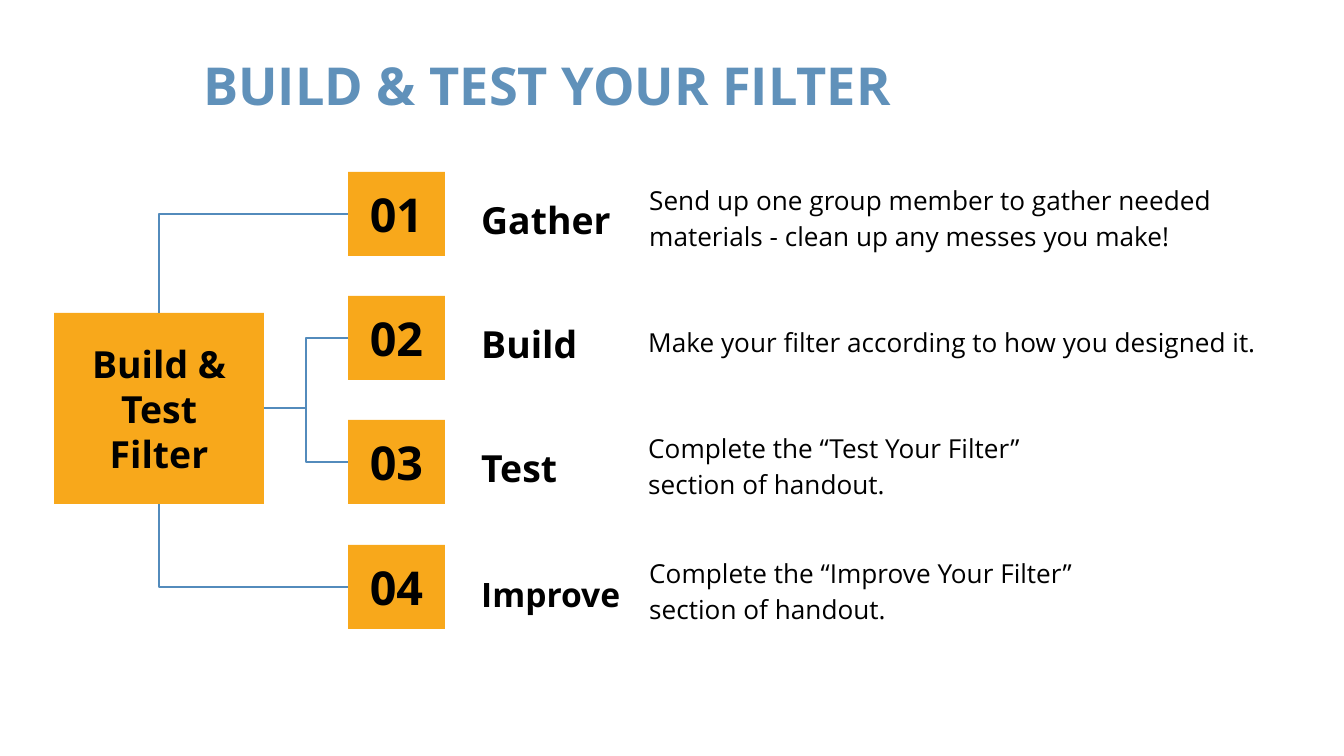
from pptx import Presentation, util as u
from pptx.dml.color import RGBColor
from pptx.enum import shapes, text
from pptx.oxml.ns import qn
from lxml import etree

PX = 914400 / 134.4  # EMU per px
ORANGE = RGBColor(0xF8, 0xA8, 0x1B)
TITLE_BLUE = RGBColor(0x60, 0x91, 0xBA)
LINE_BLUE = RGBColor(0x53, 0x8B, 0xBC)
BLACK = RGBColor(0, 0, 0)

TOP, MIDDLE, BOTTOM = (text.MSO_ANCHOR.TOP, text.MSO_ANCHOR.MIDDLE,
                       text.MSO_ANCHOR.BOTTOM)
LEFT, CENTER = text.PP_ALIGN.LEFT, text.PP_ALIGN.CENTER


def px(*values):
    return [u.Emu(round(v * PX)) for v in values]


def write(sp, content, size=14, color=BLACK, bold=False, align=LEFT,
          anchor=MIDDLE, spacing=None, font="Open Sans"):
    """Fill a shape with text, one paragraph per line."""
    tf = sp.text_frame
    tf.word_wrap = True
    tf.vertical_anchor = anchor
    tf.margin_left = tf.margin_right = u.Inches(0.1)
    tf.margin_top = tf.margin_bottom = u.Inches(0.1)
    for i, line in enumerate(content.split("\n")):
        p = tf.add_paragraph() if i else tf.paragraphs[0]
        p.alignment = align
        if spacing:
            p.line_spacing = spacing
        r = p.add_run()
        r.text = line
        r.font.name, r.font.size, r.font.bold = font, u.Pt(size), bold
        r.font.color.rgb = color


class Board:
    """Holds the current slide and the style of its elements."""

    def __init__(self, s, fill=ORANGE, line=LINE_BLUE):
        self.s, self.fill, self.line = s, fill, line

    def label(self, x, y, w, h, content, **fmt):
        write(self.s.shapes.add_textbox(*px(x, y, w, h)), content, **fmt)

    def box(self, x, y, w, h, content, **fmt):
        sp = self.s.shapes.add_shape(shapes.MSO_SHAPE.RECTANGLE, *px(x, y, w, h))
        sp.shadow.inherit = False
        sp.fill.solid()
        sp.fill.fore_color.rgb = self.fill
        sp.line.fill.background()
        write(sp, content, bold=True, align=CENTER, **fmt)

    def elbow(self, x1, y1, x2, y2, preset="bentConnector3"):
        sp = self.s.shapes.add_connector(shapes.MSO_CONNECTOR.ELBOW,
                                         *px(x1, y1, x2, y2))
        sp.line.color.rgb = self.line
        sp.line.width = u.Pt(0.75)
        props = sp._element.spPr
        props.find(qn("a:prstGeom")).set("prst", preset)
        etree.SubElement(props, qn("a:effectLst"))


# Step name, name size, description, its left edge and width
STEPS = [
    ("Gather", 20, "Send up one group member to gather needed materials"
     " - clean up any messes you make!", 636, 659),
    ("Build", 20, "Make your filter according to how you designed it.", 635, 636),
    ("Test", 20, "Complete the “Test Your Filter”\nsection of handout.", 635, 526),
    ("Improve", 18, "Complete the “Improve Your Filter”\nsection of handout.",
     636, 526),
]
HUB_X, HUB_Y, HUB_W, HUB_H = 54, 313, 210, 191
BOX_X, BOX_W, BOX_H = 348, 97, 84
FIRST_Y, PITCH = 172, 124.25


def main():
    prs = Presentation()
    prs.slide_width, prs.slide_height = px(1344, 756)
    s = prs.slides.add_slide(prs.slide_layouts[6])
    board = Board(s)

    # Title
    board.label(0, 40, 1094, 83, "BUILD & TEST YOUR FILTER", size=28,
                color=TITLE_BLUE, bold=True, align=CENTER, anchor=TOP)

    # Hub
    board.box(HUB_X, HUB_Y, HUB_W, HUB_H, "Build & Test Filter", size=20)

    # Steps
    tops = [round(FIRST_Y + PITCH * i) for i in range(len(STEPS))]
    for i, (name, size, description, x, w) in enumerate(STEPS):
        y = tops[i]
        board.box(BOX_X, y, BOX_W, BOX_H, f"{i + 1:02}", size=25, anchor=TOP)
        board.label(468, y + 1, 318, 82, name, size=size, bold=True,
                    anchor=BOTTOM, spacing=1.15)
        board.label(x, y - 9, w, 105, description, spacing=1.15)

    # Connectors: outer steps meet the hub's top and bottom, inner ones its side
    y1, y2, y3, y4 = [y + BOX_H // 2 for y in tops]
    for y, hub_edge in ((y1, HUB_Y), (y4, HUB_Y + HUB_H)):
        board.elbow(BOX_X, y, HUB_X + HUB_W // 2, hub_edge, "bentConnector2")
    for y in (y2, y3):
        board.elbow(BOX_X, y, HUB_X + HUB_W, HUB_Y + HUB_H // 2)

    prs.save("out.pptx")


if __name__ == "__main__":
    main()
